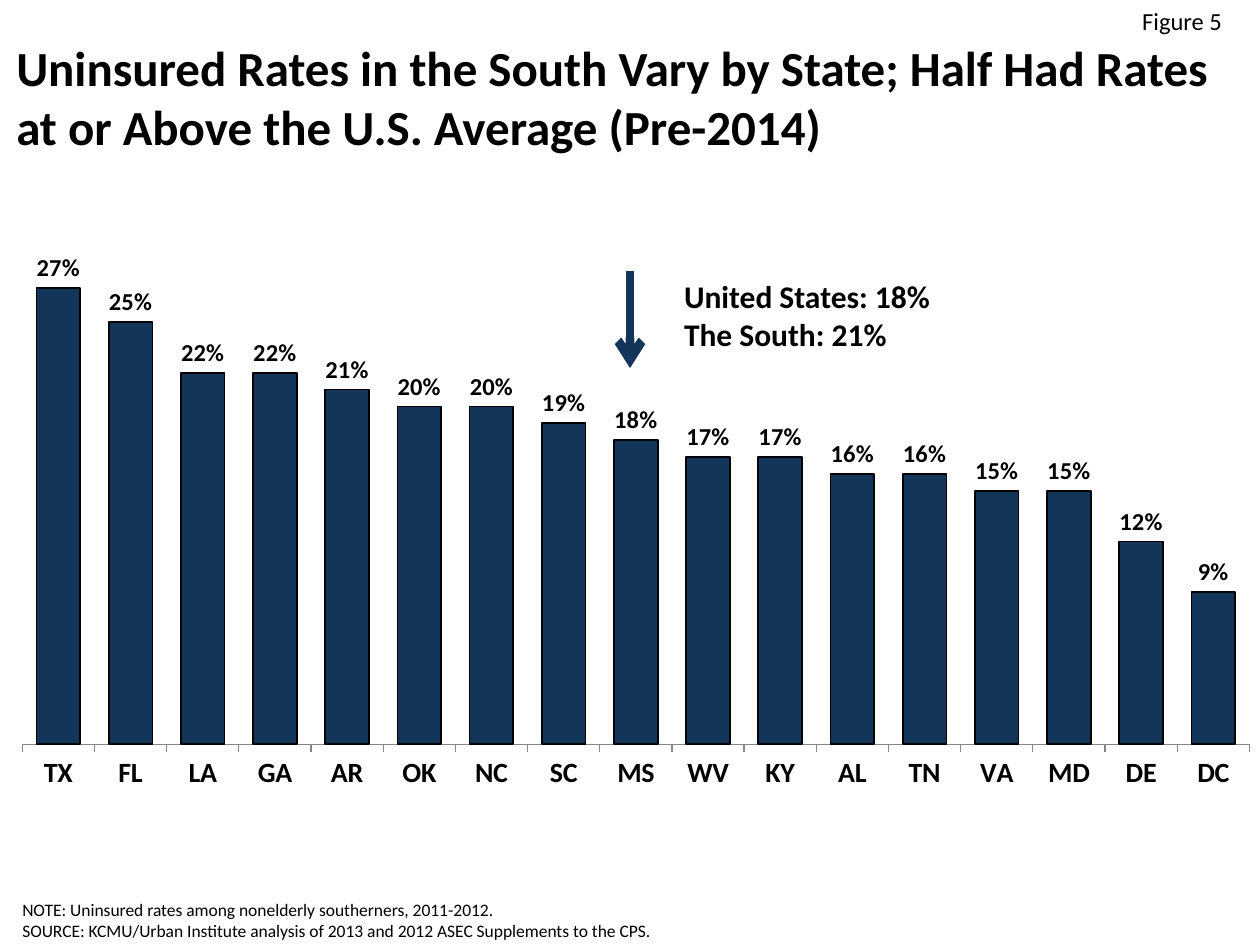
from lxml import etree
from pptx import Presentation
from pptx.chart.data import CategoryChartData
from pptx.dml.color import RGBColor
from pptx.enum.chart import XL_CHART_TYPE, XL_LABEL_POSITION, XL_TICK_MARK
from pptx.enum.shapes import MSO_CONNECTOR
from pptx.enum.text import MSO_ANCHOR, PP_ALIGN
from pptx.oxml import parse_xml
from pptx.oxml.ns import nsdecls, qn
from pptx.util import Cm, Pt

COLUMN = XL_CHART_TYPE.COLUMN_CLUSTERED
OUT_END = XL_LABEL_POSITION.OUTSIDE_END
TICK_OUT = XL_TICK_MARK.OUTSIDE
STRAIGHT = MSO_CONNECTOR.STRAIGHT
TOP, BOTTOM = MSO_ANCHOR.TOP, MSO_ANCHOR.BOTTOM
LEFT, CENTER = PP_ALIGN.LEFT, PP_ALIGN.CENTER

FONT = "Calibri"
NAVY = "133559"
BLACK = "000000"
GRAY = "868686"

RATES = {
    "TX": 0.27, "FL": 0.25, "LA": 0.22, "GA": 0.22, "AR": 0.21, "OK": 0.20,
    "NC": 0.20, "SC": 0.19, "MS": 0.18, "WV": 0.17, "KY": 0.17, "AL": 0.16,
    "TN": 0.16, "VA": 0.15, "MD": 0.15, "DE": 0.12, "DC": 0.09,
}


def color(code):
    return RGBColor.from_string(code)


def style(font, size, bold=False):
    font.name = FONT
    font.size = Pt(size)
    font.bold = bold
    font.color.rgb = color(BLACK)


def add_text(slide, area, lines, size, bold=False, align=LEFT, anchor=TOP, wrap=True):
    box = slide.shapes.add_textbox(*map(Cm, area))
    frame = box.text_frame
    frame.word_wrap = wrap
    frame.vertical_anchor = anchor
    for i, line in enumerate(lines):
        para = frame.add_paragraph() if i else frame.paragraphs[0]
        para.alignment = align
        run = para.add_run()
        run.text = line
        style(run.font, size, bold)


def set_plot(chart, x, y, w, h):
    """Fix the inner plot area as fractions of the chart."""
    area = chart.plots[0]._element.getparent()
    for old in area.findall(qn("c:layout")):
        area.remove(old)
    parts = "".join(f'<c:{tag} val="{val}"/>' for tag, val in (
        ("layoutTarget", "inner"), ("xMode", "edge"), ("yMode", "edge"),
        ("x", x), ("y", y), ("w", w), ("h", h)))
    area.insert(0, parse_xml(
        f'<c:layout {nsdecls("c")}><c:manualLayout>{parts}'
        "</c:manualLayout></c:layout>"))


def add_bars(slide, area, rates):
    data = CategoryChartData(number_format="0%")
    data.categories = list(rates)
    data.add_series("Series 1", list(rates.values()))
    chart = slide.shapes.add_chart(COLUMN, *map(Cm, area), data).chart
    chart.has_legend = False
    chart.has_title = False
    style(chart.font, 18)

    # Axes
    cat = chart.category_axis
    cat.major_tick_mark = TICK_OUT
    cat.format.line.color.rgb = color(GRAY)
    style(cat.tick_labels.font, 16, True)
    val = chart.value_axis
    val.minimum_scale, val.maximum_scale = 0, 0.3
    val.has_major_gridlines = False
    val.visible = False

    # Bars and labels
    plot = chart.plots[0]
    plot.gap_width = 65
    plot.vary_by_categories = False
    bars = plot.series[0].format
    bars.fill.solid()
    bars.fill.fore_color.rgb = color(NAVY)
    bars.line.color.rgb = color(BLACK)
    bars.line.width = Pt(1)
    plot.has_data_labels = True
    tags = plot.data_labels
    tags.show_value = True
    tags.number_format = "0%"
    tags.number_format_is_linked = False
    tags.position = OUT_END
    style(tags.font, 14, True)
    set_plot(chart, 0.006, 0.156, 0.994, 0.777)


def add_arrow(slide, ends, code, width):
    arrow = slide.shapes.add_connector(STRAIGHT, *map(Cm, ends))
    arrow.line.color.rgb = color(code)
    arrow.line.width = Pt(width)
    etree.SubElement(arrow.line._get_or_add_ln(), qn("a:tailEnd"), type="arrow")
    etree.SubElement(arrow._element.spPr, qn("a:effectLst"))


def main():
    deck = Presentation()
    deck.slide_width, deck.slide_height = Cm(25.4), Cm(19.05)
    slide = deck.slides.add_slide(deck.slide_layouts[6])

    # Figure number and title
    add_text(slide, (22.6, 0, 2.46, 0.86), ["Figure 5"], 14,
             align=CENTER, wrap=False)
    add_text(slide, (0.08, 0.64, 24.9, 2.54),
             ["Uninsured Rates in the South Vary by State; Half Had Rates "
              "at or Above the U.S. Average (Pre-2014)"], 28, True)

    # Rates by state
    add_bars(slide, (0.3, 2.74, 24.9, 13.2), RATES)

    # Averages, with an arrow to the state at the U.S. rate
    add_text(slide, (13.54, 5.46, 9.73, 1.8),
             ["United States: 18%", "The South: 21%"], 18, True)
    add_arrow(slide, (12.7, 5.46, 12.7, 7.42), NAVY, 5)

    # Note and source
    add_text(slide, (0.2, 17.58, 23.1, 1.52),
             ["NOTE: Uninsured rates among nonelderly southerners, 2011-2012.",
              "SOURCE: KCMU/Urban Institute analysis of 2013 and 2012 ASEC "
              "Supplements to the CPS."], 10, anchor=BOTTOM)

    deck.save("out.pptx")


if __name__ == "__main__":
    main()
